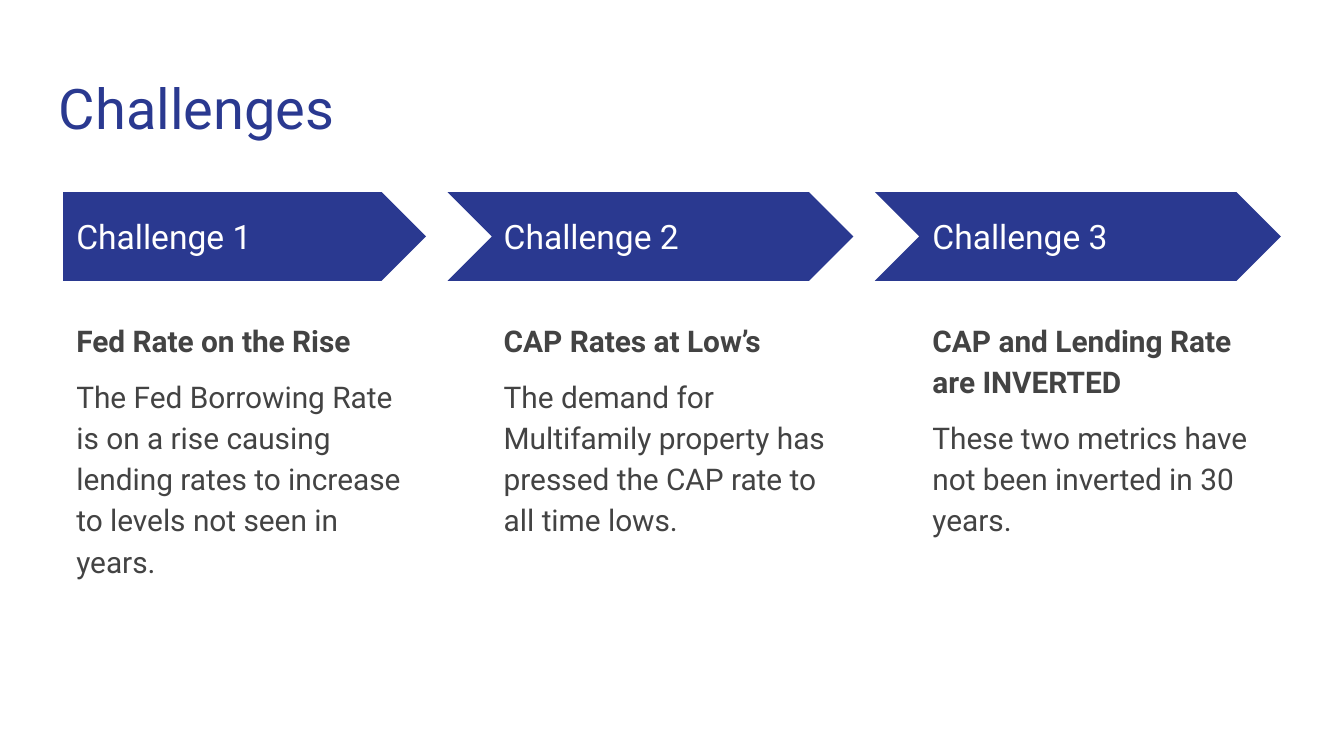
from dataclasses import dataclass

from pptx import Presentation
from pptx.dml.color import RGBColor
from pptx.enum.shapes import MSO_SHAPE as Shape
from pptx.enum.text import MSO_ANCHOR as Anchor
from pptx.slide import Slide
from pptx.util import Inches, Pt

NAVY = RGBColor(0x2A, 0x39, 0x90)
GRAY = RGBColor(0x43, 0x43, 0x43)
WHITE = RGBColor(0xFF, 0xFF, 0xFF)
FONT = "Roboto"

SLIDE_WIDTH = Inches(10)
SLIDE_HEIGHT = SLIDE_WIDTH * 9 // 16

ARROW_TOP, ARROW_HEIGHT = 1.43, 0.66
COLUMN_WIDTH = 2.7
CHEVRON_WIDTH = 3.02


@dataclass(frozen=True)
class Challenge:
    arrow: Shape
    arrow_left: float
    arrow_width: float
    text_left: float
    label: str
    heading: str
    detail: str


CHALLENGES = [
    Challenge(
        Shape.PENTAGON, 0.47, COLUMN_WIDTH, 0.47,
        "Challenge 1",
        "Fed Rate on the Rise",
        "The Fed Borrowing Rate is on a rise causing lending rates "
        "to increase to levels not seen in years.",
    ),
    Challenge(
        Shape.CHEVRON, 3.33, CHEVRON_WIDTH, 3.65,
        "Challenge 2",
        "CAP Rates at Low’s",
        "The demand for Multifamily property has pressed the CAP rate "
        "to all time lows.",
    ),
    Challenge(
        Shape.CHEVRON, 6.51, CHEVRON_WIDTH, 6.84,
        "Challenge 3",
        "CAP and Lending Rate are INVERTED",
        "These two metrics have not been inverted in 30 years.",
    ),
]


def add_text(slide: Slide, paragraphs: list[str], left: float, top: float,
             width: float, height: float, *, size: float, color: RGBColor,
             anchor: Anchor = Anchor.TOP, bold_first: bool = False,
             line_spacing: float = 1.0, gap: float = 0) -> None:
    """Add a text box; gap is the space in points around later paragraphs."""
    box = slide.shapes.add_textbox(
        Inches(left), Inches(top), Inches(width), Inches(height))
    frame = box.text_frame
    frame.word_wrap = True
    frame.vertical_anchor = anchor
    frame.margin_left = frame.margin_right = Inches(0.1)
    frame.margin_top = frame.margin_bottom = Inches(0.1)
    frame.text = "\n".join(paragraphs)
    for index, paragraph in enumerate(frame.paragraphs):
        paragraph.line_spacing = line_spacing
        if index:
            paragraph.space_before = paragraph.space_after = Pt(gap)
        font = paragraph.runs[0].font
        font.name, font.size = FONT, Pt(size)
        font.bold = bold_first and index == 0
        font.color.rgb = color


def add_arrow(slide: Slide, kind: Shape, left: float, width: float) -> None:
    arrow = slide.shapes.add_shape(
        kind, Inches(left), Inches(ARROW_TOP), Inches(width), Inches(ARROW_HEIGHT))
    arrow.adjustments[0] = 0.5
    arrow.shadow.inherit = False
    arrow.fill.solid()
    arrow.fill.fore_color.rgb = NAVY
    arrow.line.fill.background()


def add_challenge(slide: Slide, challenge: Challenge) -> None:
    add_arrow(slide, challenge.arrow, challenge.arrow_left, challenge.arrow_width)
    add_text(slide, [challenge.label], challenge.text_left, 1.59, 2.47, 0.34,
             size=18, color=WHITE, anchor=Anchor.MIDDLE)
    add_text(slide, [challenge.heading, challenge.detail],
             challenge.text_left, 2.26, COLUMN_WIDTH, 2.9, size=16, color=GRAY,
             bold_first=True, line_spacing=1.15, gap=8)


def main() -> None:
    deck = Presentation()
    deck.slide_width, deck.slide_height = SLIDE_WIDTH, SLIDE_HEIGHT
    slide = deck.slides.add_slide(deck.slide_layouts[6])
    add_text(slide, ["Challenges"], 0.34, 0.45, 9.32, 0.66, size=30, color=NAVY)
    for challenge in CHALLENGES:
        add_challenge(slide, challenge)
    deck.save("out.pptx")


if __name__ == "__main__":
    main()
